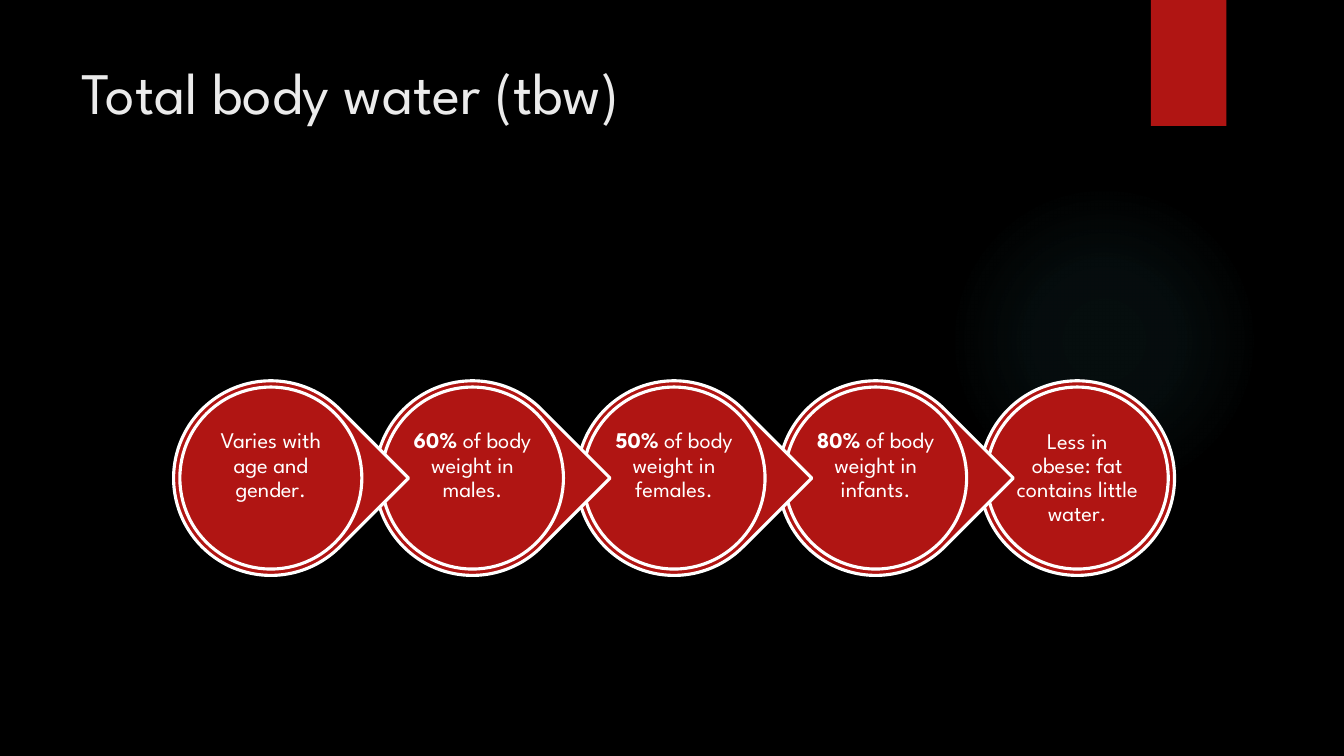
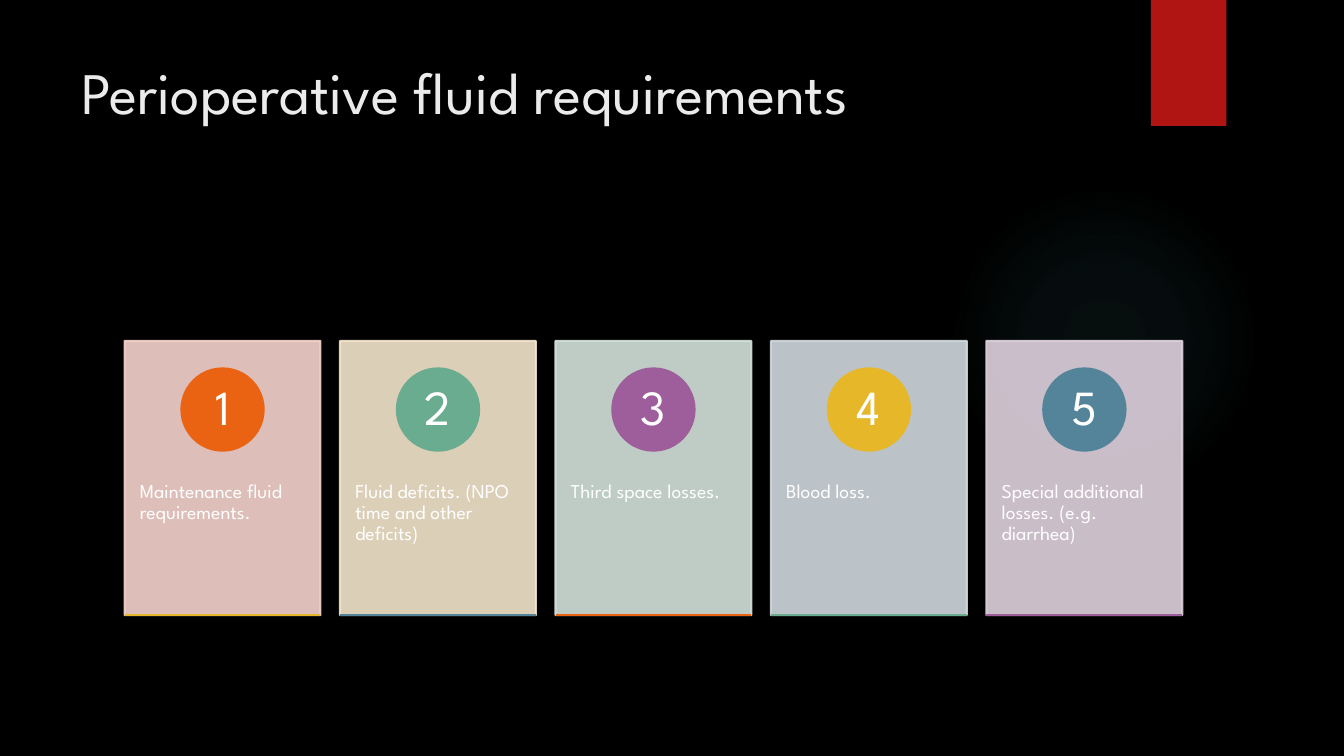
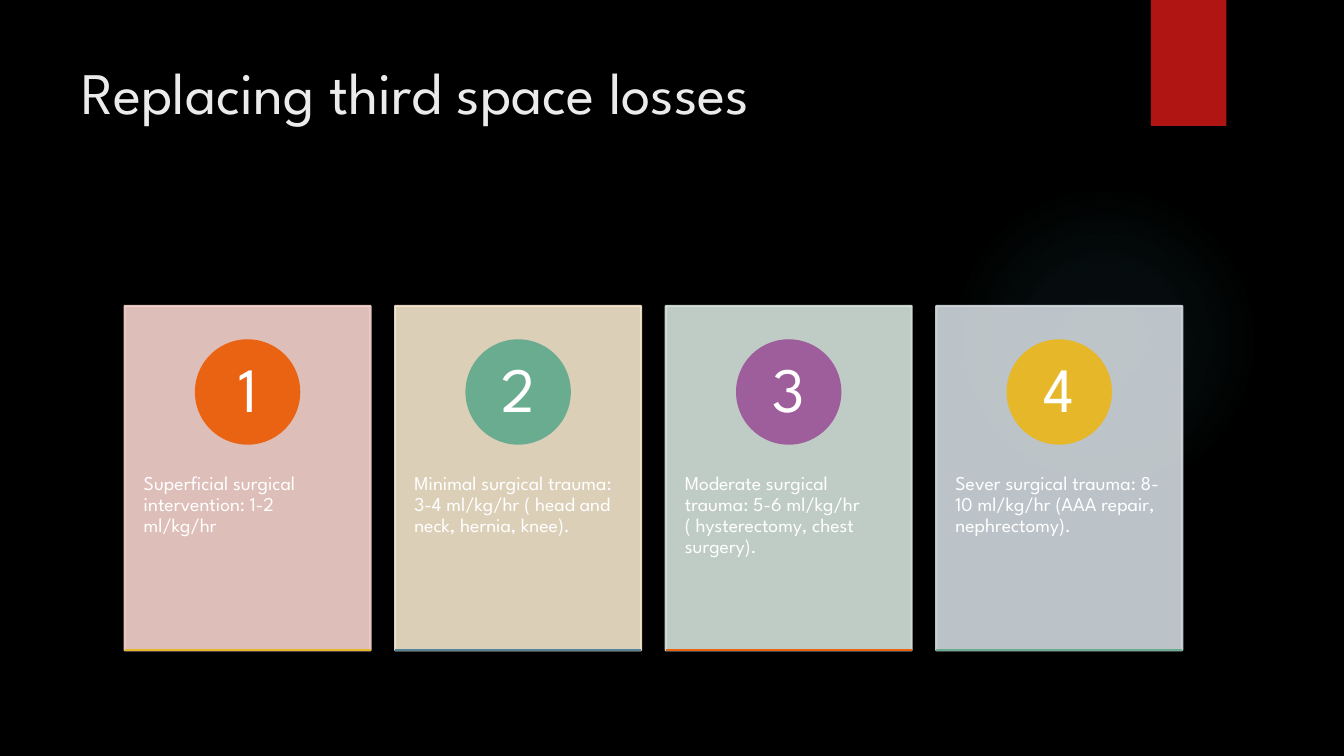
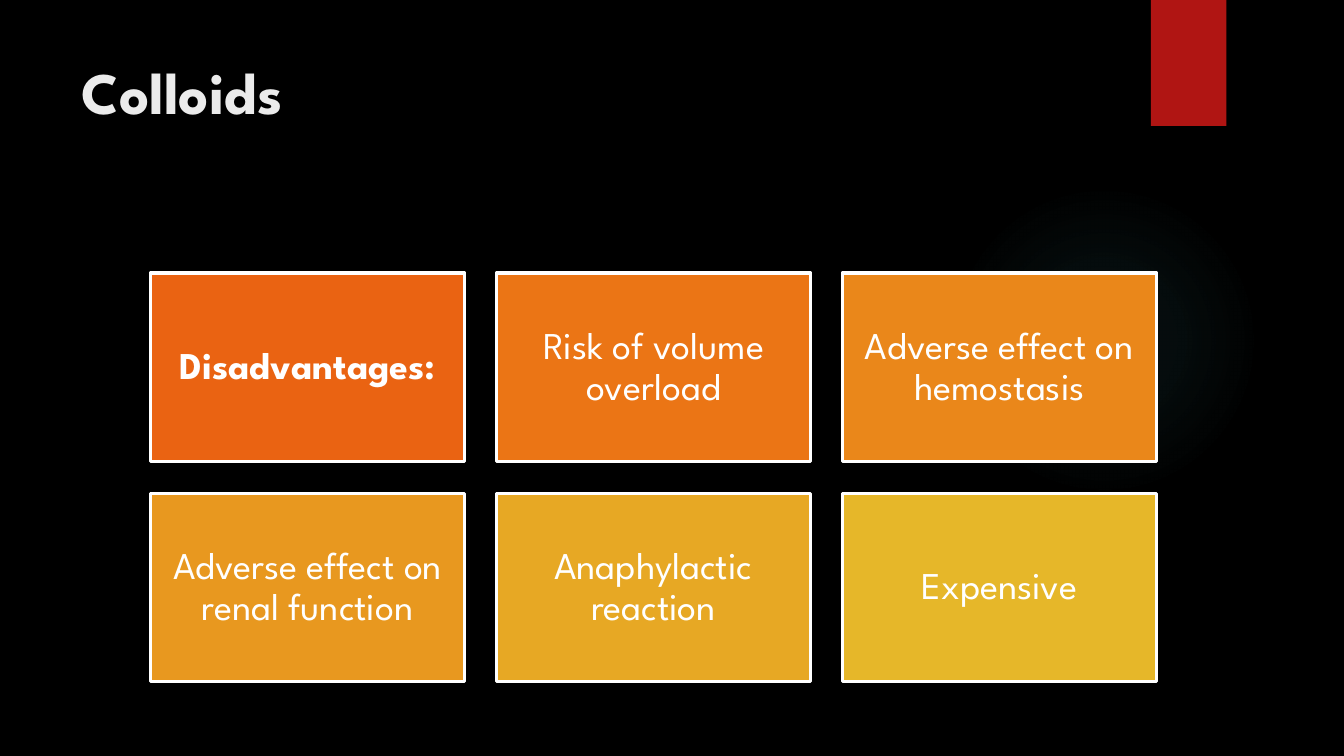
from pptx import Presentation
from pptx import util as u
from pptx.dml.color import RGBColor
from pptx.enum import shapes, text
from pptx.oxml import parse_xml
from pptx.oxml.ns import nsdecls, qn
from lxml import etree

Pt = u.Pt
SHAPE = shapes.MSO_SHAPE
ANCHOR = text.MSO_ANCHOR
ALIGN = text.PP_ALIGN


class Theme:
    font = "League Spartan"
    background, title, white = "000000", "EBEBEB", "FFFFFF"
    red, glow = "B01513", "50B9C1"
    orange, green, purple = "EA6312", "6AAC90", "9E5E9B"
    yellow, blue = "E6B729", "54849A"
    cards = ["F7D3CC", "F5E6CD", "D4E3DB", "D1D9DE", "DFD2DE"]
    badges = [orange, green, purple, yellow, blue]
    card_rules = [yellow, blue, orange, green, purple]
    tiles = [orange, "EB7515", "EA871A", "E8981F", "E7A824", yellow]
    title_size, tile_size, chain_size, card_size = 42, 27, 16, 14
    outline, thin = 2.25, 1.5


def draw(slide, preset, box, fill, line=None, width=0, opacity=100):
    """Add a flat shape; box is left, top, width, height in points."""
    shape = slide.shapes.add_shape(preset, *[Pt(round(v, 2)) for v in box])
    shape.shadow.inherit = False
    shape.fill.solid()
    shape.fill.fore_color.rgb = RGBColor.from_string(fill)
    if line:
        shape.line.color.rgb = RGBColor.from_string(line)
        shape.line.width = Pt(width)
    else:
        shape.line.fill.background()
    if opacity < 100:
        for colour in shape.element.spPr.iter(qn("a:srgbClr")):
            etree.SubElement(colour, qn("a:alpha"), val=str(opacity * 1000))
    return shape


def write(shape, runs, size, colour=Theme.white, align=ALIGN.CENTER,
          anchor=ANCHOR.MIDDLE, insets=(0, 0, 0, 0), spacing=0.9):
    """Fill a shape with one paragraph of (wording, bold) runs."""
    left, top, right, bottom = [Pt(round(v, 2)) for v in insets]
    frame = shape.text_frame
    frame_format = dict(word_wrap=True, auto_size=text.MSO_AUTO_SIZE.NONE,
                        vertical_anchor=anchor, margin_left=left,
                        margin_top=top, margin_right=right,
                        margin_bottom=bottom)
    for name, value in frame_format.items():
        setattr(frame, name, value)
    paragraph = frame.paragraphs[0]
    paragraph.alignment = align
    paragraph.line_spacing = spacing
    for wording, bold in runs:
        run = paragraph.add_run()
        run.text = wording
        for name, value in dict(name=Theme.font, size=Pt(size), bold=bold).items():
            setattr(run.font, name, value)
        run.font.color.rgb = RGBColor.from_string(colour)


prs = Presentation()
prs.slide_width, prs.slide_height = Pt(960), Pt(540)

# Shared look: black background and title position
layout = prs.slide_layouts[5]
layout.background.fill.solid()
layout.background.fill.fore_color.rgb = RGBColor.from_string(Theme.background)
title_place = dict(left=Pt(51), top=Pt(36), width=Pt(741), height=Pt(110))
for name, value in title_place.items():
    setattr(layout.placeholders[0], name, value)

# Slides with their titles
titles = [
    ("Total body water (tbw)", False),
    ("Perioperative fluid requirements", False),
    ("Replacing third space losses", False),
    ("Colloids", True),
]
slides = []
for heading in titles:
    slide = prs.slides.add_slide(layout)
    write(slide.shapes.title, [heading], Theme.title_size, Theme.title,
          ALIGN.LEFT, ANCHOR.TOP, (7.2, 3.6, 7.2, 3.6), 1)
    slides.append(slide)
water, requirements, losses, colloids = slides

# Shared look: faint glow and red ribbon, drawn once and moved to the layout
glow = draw(water, SHAPE.OVAL, (677.5, 132, 222, 222), Theme.glow)
stops = "".join(
    f'<a:gs pos="{place * 1000}"><a:srgbClr val="{Theme.glow}">'
    f'<a:alpha val="{opacity * 1000}"/></a:srgbClr></a:gs>'
    for place, opacity in [(0, 7), (36, 6), (69, 0)])
gradient = parse_xml(
    f'<a:gradFill {nsdecls("a")}><a:gsLst>{stops}</a:gsLst><a:path path="circle">'
    '<a:fillToRect l="50000" t="50000" r="50000" b="50000"/></a:path></a:gradFill>')
glow_properties = glow.element.spPr
glow_properties.replace(glow_properties.find(qn("a:solidFill")), gradient)
ribbon = draw(water, SHAPE.RECTANGLE, (822, 0, 54, 90), Theme.red)
for decoration in (glow, ribbon):
    layout.shapes.element.append(decoration.element)

# Total body water: chain of drops, drawn from the right so the tips overlap
chain = [
    [("Varies with age and gender.", False)],
    [("60%", True), (" of body weight in males.", False)],
    [("50%", True), (" of body weight in females.", False)],
    [("80%", True), (" of body weight in infants.", False)],
    [("Less in obese: fat contains little water.", False)],
]
drop, disc, chain_left, chain_top, chain_step = 139, 130, 124, 272, 144
rim = (drop - disc) / 2
last = len(chain) - 1
for i in range(last, -1, -1):
    left = chain_left + i * chain_step
    outer = draw(water, SHAPE.OVAL if i == last else SHAPE.TEAR,
                 (left, chain_top, drop, drop), Theme.red, Theme.white, Theme.outline)
    outer.rotation = 0 if i == last else 45
    inner = draw(water, SHAPE.OVAL, (left + rim, chain_top + rim, disc, disc),
                 Theme.red, Theme.white, Theme.outline)
    lift = 1.5 if i == last else 19
    write(inner, chain[i], Theme.chain_size, insets=(1.5, 1.5, 1.5, lift))

# Numbered cards: every measure follows from the card width
decks = [
    (requirements, 35, [
        "Maintenance fluid requirements.",
        "Fluid deficits. (NPO time and other deficits)",
        "Third space losses.",
        "Blood loss.",
        "Special additional losses. (e.g. diarrhea)",
    ]),
    (losses, 45, [
        "Superficial surgical intervention: 1-2 ml/kg/hr",
        "Minimal surgical trauma: 3-4 ml/kg/hr ( head and neck, hernia, knee).",
        "Moderate surgical trauma: 5-6 ml/kg/hr ( hysterectomy, chest surgery).",
        "Sever surgical trauma: 8-10 ml/kg/hr (AAA repair, nephrectomy).",
    ]),
]
deck_left, deck_width, deck_middle = 89, 755.5, 341.5
for slide, digit_size, wordings in decks:
    card_width = deck_width / (1.1 * len(wordings) - 0.1)
    card_height = 1.4 * card_width
    card_top = deck_middle - card_height / 2
    badge = 0.3 * card_height
    side = 0.078 * card_width
    for i, wording in enumerate(wordings):
        left = deck_left + 1.1 * card_width * i
        card = draw(slide, SHAPE.RECTANGLE, (left, card_top, card_width, card_height),
                    Theme.cards[i], Theme.cards[i], Theme.thin, opacity=90)
        write(card, [(wording, False)], Theme.card_size, align=ALIGN.LEFT,
              anchor=ANCHOR.TOP, insets=(side, 0.38 * card_height + 26, side, 26))
        number = draw(slide, SHAPE.OVAL,
                      (left + (card_width - badge) / 2, card_top + 0.1 * card_height,
                       badge, badge),
                      Theme.badges[i], Theme.badges[i], Theme.thin)
        write(number, [(str(i + 1), False)], digit_size)
        ends = (left, card_top + card_height, left + card_width, card_top + card_height)
        rule = slide.shapes.add_connector(shapes.MSO_CONNECTOR.STRAIGHT,
                                          *[Pt(round(v, 2)) for v in ends])
        rule.line.color.rgb = RGBColor.from_string(Theme.card_rules[i])
        rule.line.width = Pt(Theme.thin)
        etree.SubElement(rule.element.spPr, qn("a:effectLst"))

# Colloids: grid of tiles, heading first
tiles = [
    "Disadvantages:", "Risk of volume overload", "Adverse effect on hemostasis",
    "Adverse effect on renal function", "Anaphylactic reaction", "Expensive",
]
columns, tile_width, tile_height, gap = 3, 224.6, 134.8, 22.5
for i, wording in enumerate(tiles):
    row, column = divmod(i, columns)
    tile = draw(colloids, SHAPE.RECTANGLE,
                (107.4 + column * (tile_width + gap), 195 + row * (tile_height + gap),
                 tile_width, tile_height),
                Theme.tiles[i], Theme.white, Theme.outline)
    write(tile, [(wording, i == 0)], Theme.tile_size, insets=(8, 8, 8, 8))

prs.save("out.pptx")
